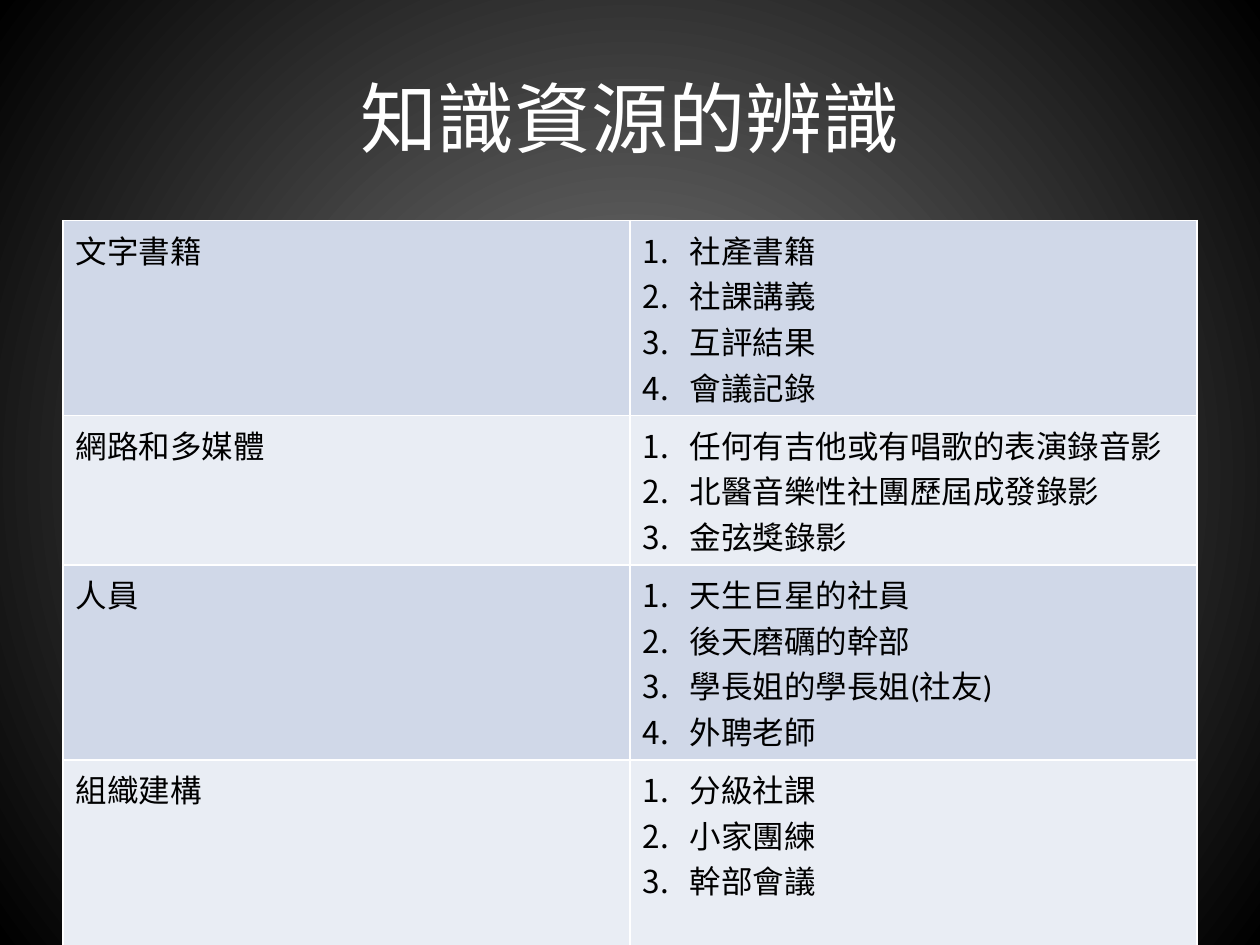
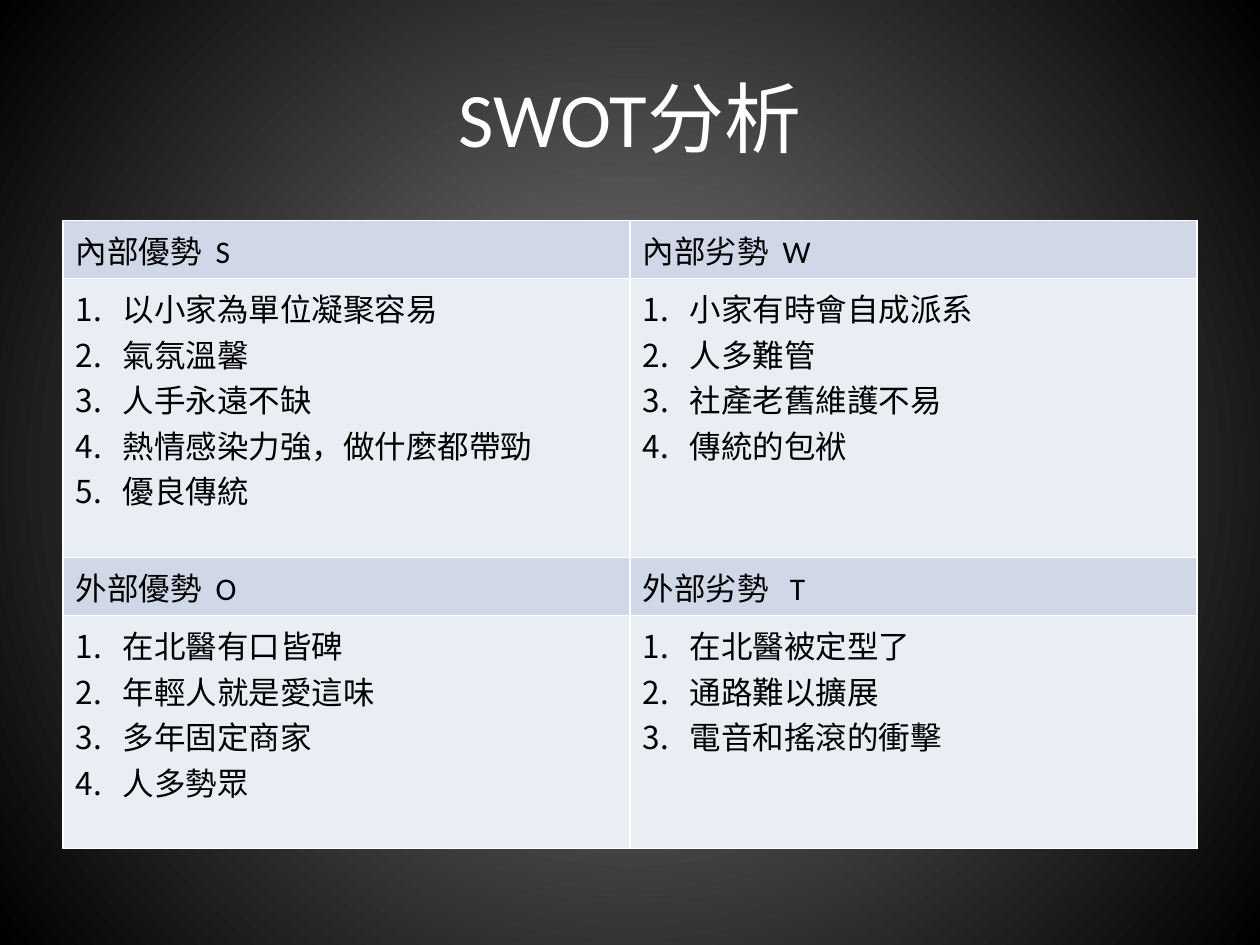
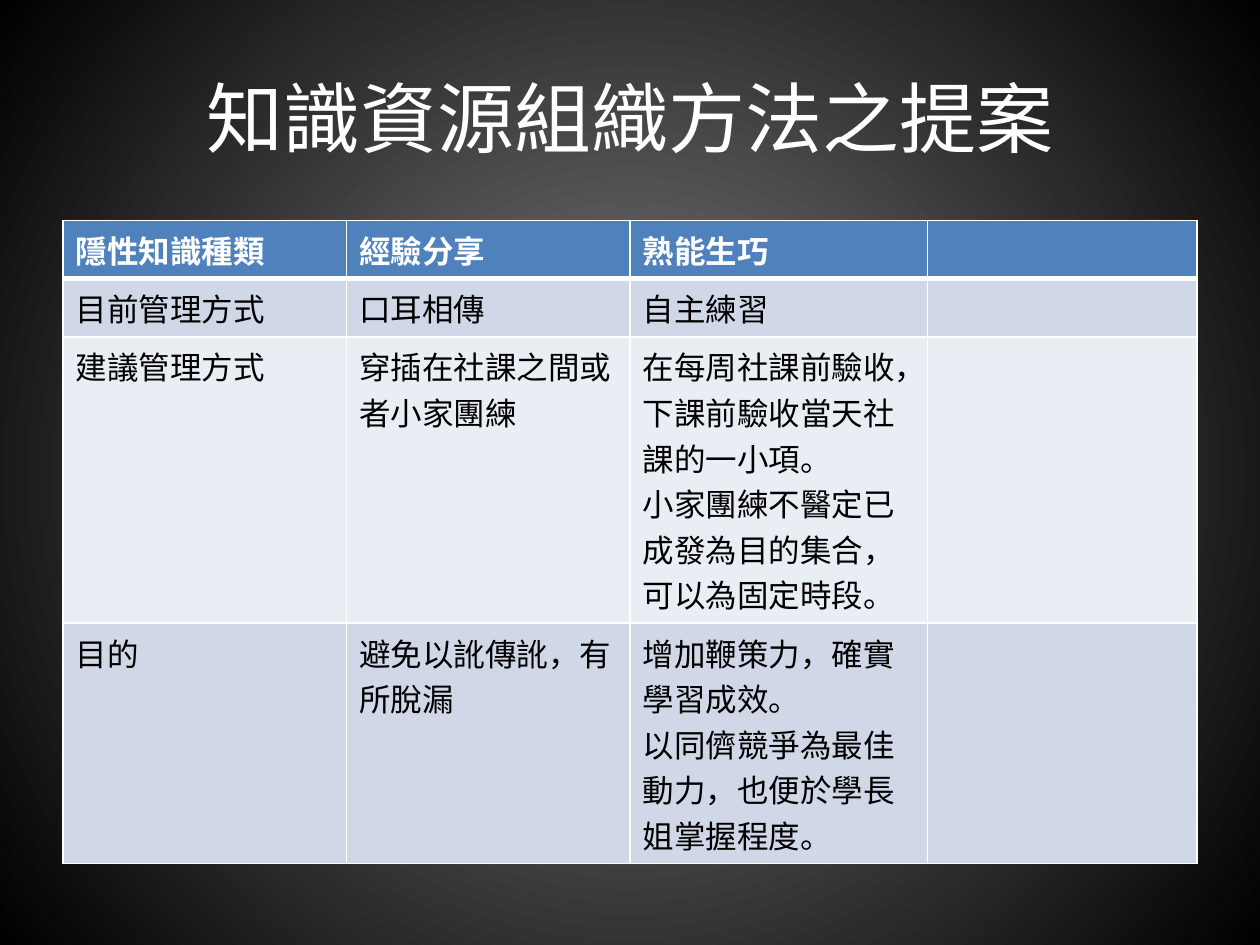
from dataclasses import dataclass
from typing import NamedTuple

from lxml import etree
from pptx import Presentation
from pptx.dml.color import RGBColor
from pptx.enum import text as t
from pptx.oxml import ns
from pptx.util import Pt


@dataclass(frozen=True)
class Theme:
    font: str = "Calibri"
    head: int = 44
    body: int = 18
    white: str = "FFFFFF"
    black: str = "000000"
    grey: str = "7F7F7F"
    blue: str = "4F81BD"
    dark: str = "D0D8E8"
    light: str = "E9EDF4"
    thin: float = 1
    thick: float = 3


LOOK = Theme()
LEFT, WIDTH = 36, 648
TOP = 126
LINE, PAD, SPARE = 26, 7.2, 22
INDENT = 27


class Cell(NamedTuple):
    text: str = ""
    num: bool = False


class Row(NamedTuple):
    cells: list[Cell]
    lines: int
    spare: float = 0


class Page(NamedTuple):
    title: str
    cols: list[float]
    rows: list[Row]
    head: bool = False


def items(*lines: str) -> Cell:
    """Return a cell that holds a numbered list."""
    return Cell("\n".join(lines), True)


def plain(*texts: str) -> list[Cell]:
    return [Cell(text) for text in texts]


PAGES = [
    Page("知識資源的辨識", [324, 324], [
        Row([Cell("文字書籍"),
             items("社產書籍", "社課講義", "互評結果", "會議記錄")], 4),
        Row([Cell("網路和多媒體"),
             items("任何有吉他或有唱歌的表演錄音影", "北醫音樂性社團歷屆成發錄影",
                   "金弦獎錄影")], 3),
        Row([Cell("人員"),
             items("天生巨星的社員", "後天磨礪的幹部", "學長姐的學長姐(社友)",
                   "外聘老師")], 4),
        Row([Cell("組織建構"),
             items("分級社課", "小家團練", "幹部會議")], 3, SPARE),
    ]),
    Page("SWOT分析", [324, 324], [
        Row(plain("內部優勢  S", "內部劣勢  W"), 1),
        Row([items("以小家為單位凝聚容易", "氣氛溫馨", "人手永遠不缺",
                   "熱情感染力強，做什麼都帶勁", "優良傳統"),
             items("小家有時會自成派系", "人多難管", "社產老舊維護不易",
                   "傳統的包袱")], 5, SPARE),
        Row(plain("外部優勢  O", "外部劣勢   T"), 1),
        Row([items("在北醫有口皆碑", "年輕人就是愛這味", "多年固定商家", "人多勢眾"),
             items("在北醫被定型了", "通路難以擴展", "電音和搖滾的衝擊")], 4, SPARE),
    ]),
    Page("知識資源組織方法之提案", [162, 162, 170, 154], [
        Row(plain("隱性知識種類", "經驗分享", "熟能生巧", ""), 1),
        Row(plain("目前管理方式", "口耳相傳", "自主練習", ""), 1),
        Row(plain("建議管理方式", "穿插在社課之間或者小家團練",
                  "在每周社課前驗收，下課前驗收當天社課的一小項。\n"
                  "小家團練不醫定已成發為目的集合，可以為固定時段。", ""), 6),
        Row(plain("目的", "避免以訛傳訛，有所脫漏",
                  "增加鞭策力，確實學習成效。\n"
                  "以同儕競爭為最佳動力，也便於學長姐掌握程度。", ""), 5),
    ], head=True),
]


def rgb(code: str) -> RGBColor:
    return RGBColor.from_string(code)


def node(parent, tag: str, **attrs):
    return etree.SubElement(parent, ns.qn(tag), attrs)


def say(frame, text: str, *, size: int = LOOK.body, ink: str = LOOK.black,
        bold: bool = False, num: bool = False, align=t.PP_ALIGN.LEFT) -> None:
    """Write one paragraph for each line of text."""
    for i, line in enumerate(text.split("\n")):
        para = frame.paragraphs[0] if i == 0 else frame.add_paragraph()
        para.alignment = align
        if num:
            props = para._p.get_or_add_pPr()
            props.set("marL", str(Pt(INDENT)))
            props.set("indent", str(-Pt(INDENT)))
            node(props, "a:buFont", typeface="+mj-lt")
            node(props, "a:buAutoNum", type="arabicPeriod")
        run = para.add_run()
        run.text = line
        font = run.font
        font.name, font.size, font.bold = LOOK.font, Pt(size), bold
        font.color.rgb = rgb(ink)


def edge(cell, base: float) -> None:
    """Draw white borders, with the bottom one as wide as base."""
    props = cell._tc.get_or_add_tcPr()
    for i, side in enumerate("LRTB"):
        wide = base if side == "B" else LOOK.thin
        line = node(props, f"a:ln{side}", w=str(Pt(wide)))
        node(node(line, "a:solidFill"), "a:srgbClr", val=LOOK.white)
        props.insert(i, line)


def shade(master) -> None:
    """Give the master a round gradient, light in the middle."""
    fill = master.background.fill
    fill.gradient()
    for stop, code in zip(fill.gradient_stops, (LOOK.grey, LOOK.black)):
        stop.color.rgb = rgb(code)
    grad = master.element.find(".//" + ns.qn("a:gradFill"))
    grad.remove(grad.find(ns.qn("a:lin")))
    ring = node(grad, "a:path", path="circle")
    node(ring, "a:fillToRect", l="50000", t="50000", r="50000", b="50000")


def grid(slide, page: Page) -> None:
    highs = [row.lines * LINE + PAD + row.spare for row in page.rows]
    table = slide.shapes.add_table(
        len(page.rows), len(page.cols), Pt(LEFT), Pt(TOP), Pt(WIDTH),
        Pt(sum(highs))).table
    table.first_row, table.horz_banding = page.head, not page.head
    for col, wide in zip(table.columns, page.cols):
        col.width = Pt(wide)
    for r, (row, high) in enumerate(zip(page.rows, highs)):
        table.rows[r].height = Pt(high)
        top = page.head and r == 0
        band = LOOK.dark if (r + page.head) % 2 == 0 else LOOK.light
        for c, item in enumerate(row.cells):
            cell = table.cell(r, c)
            cell.fill.solid()
            cell.fill.fore_color.rgb = rgb(LOOK.blue if top else band)
            edge(cell, LOOK.thick if top else LOOK.thin)
            if item.text:
                say(cell.text_frame, item.text, num=item.num, bold=top,
                    ink=LOOK.white if top else LOOK.black)


def build(deck, page: Page) -> None:
    slide = deck.slides.add_slide(deck.slide_layouts[5])
    title = slide.shapes.title
    title.left, title.top = Pt(LEFT), Pt(21.6)
    title.width, title.height = Pt(WIDTH), Pt(90)
    title.text_frame.vertical_anchor = t.MSO_ANCHOR.MIDDLE
    say(title.text_frame, page.title, size=LOOK.head, ink=LOOK.white,
        align=t.PP_ALIGN.CENTER)
    grid(slide, page)


def main() -> None:
    deck = Presentation()
    deck.slide_width, deck.slide_height = Pt(720), Pt(540)
    shade(deck.slide_master)
    for page in PAGES:
        build(deck, page)
    deck.save("out.pptx")


if __name__ == "__main__":
    main()
